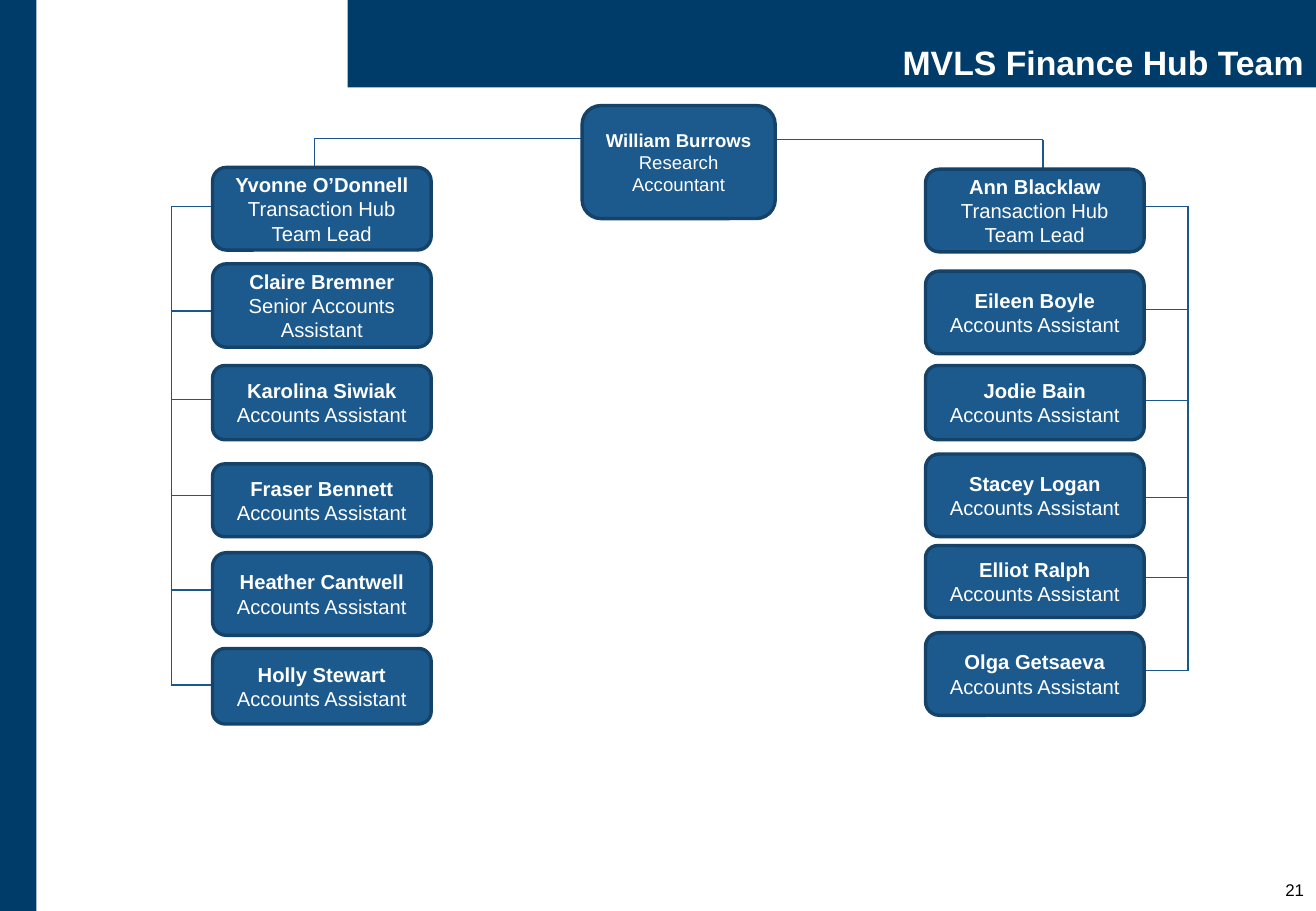
from lxml.etree import SubElement
from pptx import Presentation
from pptx.dml.color import RGBColor
from pptx.enum.shapes import MSO_CONNECTOR, MSO_SHAPE
from pptx.enum.text import MSO_ANCHOR as ANCHOR, PP_ALIGN as ALIGN
from pptx.oxml.ns import qn
from pptx.util import Pt

NAVY = RGBColor(0x00, 0x3C, 0x69)
BOX_BLUE = RGBColor(0x1C, 0x59, 0x8C)
BOX_EDGE = RGBColor(0x15, 0x42, 0x68)
LINK_BLUE = RGBColor(0x19, 0x57, 0x8C)
WHITE = RGBColor(0xFF, 0xFF, 0xFF)
BLACK = RGBColor(0x00, 0x00, 0x00)

BOX_WIDTH = 129.6
LEFT_X, RIGHT_X = 126, 548.6
LEFT_SPINE, RIGHT_SPINE = 101.5, 704.2
ASSISTANT = "Accounts Assistant"
LEAD = "Transaction Hub Team Lead"

prs = Presentation()
prs.slide_width, prs.slide_height = Pt(780), Pt(540)
slide = prs.slides.add_slide(prs.slide_layouts[6])
shapes = slide.shapes


def add_block(preset, x, y, width, height, fill, edge=None):
    block = shapes.add_shape(preset, Pt(x), Pt(y), Pt(width), Pt(height))
    block.shadow.inherit = False
    block.fill.solid()
    block.fill.fore_color.rgb = fill
    if edge is None:
        block.line.fill.background()
    else:
        block.line.color.rgb = edge
        block.line.width = Pt(2)
    block.text_frame.word_wrap = True
    return block


def write(paragraph, text, size, color, align, bold=False):
    paragraph.text = text
    paragraph.alignment = align
    font = paragraph.font
    font.name, font.size, font.bold = "Arial", Pt(size), bold
    font.color.rgb = color


# Side band and title bar
add_block(MSO_SHAPE.RECTANGLE, 0, 0, 21.6, 540, NAVY)
title = add_block(MSO_SHAPE.RECTANGLE, 206, 0, 574, 51.8, NAVY).text_frame
title.vertical_anchor = ANCHOR.BOTTOM
title.margin_left, title.margin_right = Pt(5.8), Pt(7.2)
title.margin_top = title.margin_bottom = Pt(2.9)
write(title.paragraphs[0], "MVLS Finance Hub Team", 20, WHITE, ALIGN.RIGHT, True)
title.paragraphs[0].line_spacing = 0.9

# Page number
page = shapes.add_textbox(Pt(717.2), Pt(517.7), Pt(62.8), Pt(22.3)).text_frame
page.word_wrap = True
write(page.paragraphs[0], "21", 10, BLACK, ALIGN.RIGHT)

# Team members: name, role, top, height, height of the link to the spine
left_team = [
    ("Yvonne O’Donnell", LEAD, 99.2, 49, 122.4),
    ("Claire Bremner", "Senior Accounts Assistant", 156.4, 49.5, 184.4),
    ("Karolina Siwiak", ASSISTANT, 216.7, 44, 236.8),
    ("Fraser Bennett", ASSISTANT, 275, 43.2, 293.7),
    ("Heather Cantwell", ASSISTANT, 327.6, 49, 349.8),
    ("Holly Stewart", ASSISTANT, 384.4, 44.8, 406.1),
]
right_team = [
    ("Ann Blacklaw", LEAD, 100.3, 49, 122.4),
    ("Eileen Boyle", ASSISTANT, 160.7, 49, 183.6),
    ("Jodie Bain", ASSISTANT, 216.7, 44, 237.5),
    ("Stacey Logan", ASSISTANT, 269.1, 49, 294.7),
    ("Elliot Ralph", ASSISTANT, 323.4, 42.6, 342.4),
    ("Olga Getsaeva", ASSISTANT, 375, 49, 397.5),
]

# Links from the accountant to the team leads
links = [
    (186.6, 82, 345, 82), (186.6, 82, 186.6, 99.2),
    (459.4, 82.9, 618.2, 82.9), (618.2, 82.9, 618.2, 100.3),
]
# Spine and side links of each team
boxes = [("William Burrows", "Research Accountant", 345, 62.6, 114.5, 67, 11)]
for team, x, edge_x, spine in (
    (left_team, LEFT_X, LEFT_X, LEFT_SPINE),
    (right_team, RIGHT_X, RIGHT_X + BOX_WIDTH, RIGHT_SPINE),
):
    links.append((spine, team[0][-1], spine, team[-1][-1]))
    for name, role, top, height, link_y in team:
        links.append((spine, link_y, edge_x, link_y))
        boxes.append((name, role, x, top, BOX_WIDTH, height, 12))

for x1, y1, x2, y2 in links:
    link = shapes.add_connector(MSO_CONNECTOR.STRAIGHT, Pt(x1), Pt(y1), Pt(x2), Pt(y2))
    link.line.color.rgb = LINK_BLUE
    link.line.width = Pt(0.75)
    SubElement(link._element.spPr, qn("a:effectLst"))

# People
for name, role, x, top, width, height, size in boxes:
    person = add_block(MSO_SHAPE.ROUNDED_RECTANGLE, x, top, width, height, BOX_BLUE, BOX_EDGE).text_frame
    person.vertical_anchor = ANCHOR.MIDDLE
    write(person.paragraphs[0], name, size, WHITE, ALIGN.CENTER, True)
    write(person.add_paragraph(), role, size, WHITE, ALIGN.CENTER)

prs.save("out.pptx")
